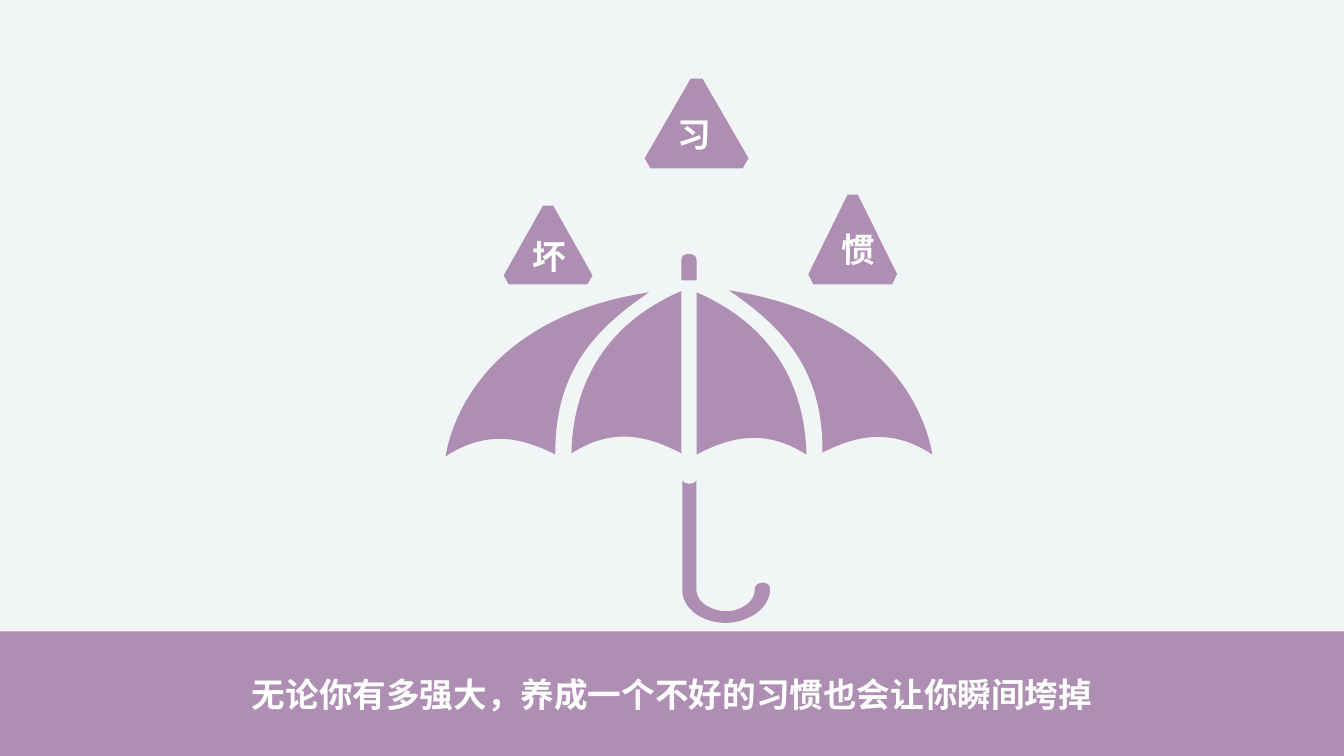
import lxml.etree
import pptx
import pptx.dml.color
import pptx.enum.text
import pptx.oxml.ns
import pptx.util

Pt = pptx.util.Pt
qn = pptx.oxml.ns.qn
COLORS = {"ground": "F1F5F6", "mauve": "AE8EB3", "white": "FFFFFF"}
FONT = "Noto Sans CJK SC"

OUTER = [
    (520.6, 207.4),
    (627.8, 223.9, 659.5, 288, 666, 324.7),
    (638.6, 306.7, 614.2, 309.6, 587.5, 323.3),
    (588.2, 263.5, 558.7, 233.3, 520.6, 207.4),
]
INNER = [
    (497.5, 208.8),
    (560.9, 236.2, 575.3, 287.3, 576, 324.7),
    (547.9, 306.7, 523.4, 311, 497.5, 324.7),
]
TIP = [
    (497.5, 185.8), (497.5, 200.2), (486.7, 200.2), (486.7, 185.8),
    (486.7, 182.9, 488.9, 181.4, 492.1, 181.4),
    (495.4, 181.4, 497.5, 182.9, 497.5, 185.8),
]
HANDLE = [
    (487.4, 343.4),
    (488.2, 344.9, 490.3, 345.6, 492.5, 345.6),
    (494.6, 345.6, 496.8, 344.9, 497.5, 343.4),
    (497.5, 422.6),
    (498.2, 427, 501.1, 431.3, 506.2, 433.4),
    (512.6, 437, 521.3, 437.8, 527.8, 434.9),
    (535, 432, 539.3, 427, 539.3, 420.5),
    (539.3, 418.3, 541.4, 416.2, 545, 416.2),
    (547.9, 416.2, 550.1, 418.3, 550.1, 420.5),
    (550.1, 429.8, 543.6, 437.8, 532.8, 442.1),
    (522.7, 446.4, 509.8, 445.7, 500.4, 440.6),
    (492.5, 436.3, 488.2, 429.8, 487.4, 423.4),
]
DROPS = [
    ("坏", (359.8, 146.9, 63.4, 56.2), (373.3, 164.9, 29.5, 36)),
    ("惯", (577.4, 139, 63.4, 64.1), (594, 159.8, 29.5, 31)),
    ("习", (460.5, 56.2, 74.2, 64.1), (477, 77.8, 50.4, 36)),
]


def tint(name):
    return pptx.dml.color.RGBColor.from_string(COLORS[name])


def paint(fill, name):
    fill.solid()
    fill.fore_color.rgb = tint(name)


def style(frame, text):
    para = frame.paragraphs[0]
    para.text = text
    font = para.font
    font.name, font.size, font.bold = FONT, Pt(24), True
    font.color.rgb = tint("white")
    props = para._p.get_or_add_pPr().get_or_add_defRPr()
    lxml.etree.SubElement(props, qn("a:ea"), typeface=FONT)
    return para


def flip(outline, drop):
    return [
        tuple(v + drop if i % 2 else 984.2 - v for i, v in enumerate(item))
        for item in outline
    ]


def bend(shape, outline):
    lines = iter(list(shape._element.iter(qn("a:lnTo"))))
    for item in outline[1:]:
        first = next(lines)
        if len(item) == 6:
            first.tag = qn("a:cubicBezTo")
            for line in (next(lines), next(lines)):
                first.append(line[0])
                line.getparent().remove(line)


def draw(group, outline):
    points = [
        (Pt(item[i]), Pt(item[i + 1]))
        for item in outline for i in range(0, len(item), 2)
    ]
    pen = group.shapes.build_freeform(*points[0])
    pen.add_line_segments(points[1:], close=False)
    shape = pen.convert_to_shape()
    bend(shape, outline)
    track = next(shape._element.iter(qn("a:moveTo"))).getparent()
    lxml.etree.SubElement(track, qn("a:close"))
    paint(shape.fill, "mauve")
    shape.line.fill.background()
    shape.shadow.inherit = False


def add_drop(slide, text, area, label):
    left, top, width, height = area
    right, base, mid = left + width, top + height, left + width / 2
    cut, rise = 0.057 * width, 0.113 * height
    group = slide.shapes.add_group_shape()
    draw(group, [
        (mid - cut, top), (mid + cut, top),
        (right, base - rise), (right - cut, base),
        (left + cut, base), (left, base - rise),
    ])
    frame = group.shapes.add_textbox(*map(Pt, label)).text_frame
    frame.word_wrap = True
    frame.auto_size = pptx.enum.text.MSO_AUTO_SIZE.SHAPE_TO_FIT_TEXT
    style(frame, text)


def add_band(slide, text):
    band = slide.shapes.title
    band.left, band.top, band.width, band.height = map(Pt, (0, 450.9, 960, 89.1))
    paint(band.fill, "mauve")
    frame = band.text_frame
    frame.auto_size = pptx.enum.text.MSO_AUTO_SIZE.NONE
    frame.vertical_anchor = pptx.enum.text.MSO_ANCHOR.MIDDLE
    style(frame, text).alignment = pptx.enum.text.PP_ALIGN.CENTER


def main():
    deck = pptx.Presentation()
    deck.slide_width, deck.slide_height = Pt(960), Pt(540)
    slide = deck.slides.add_slide(deck.slide_layouts[5])
    paint(slide.background.fill, "ground")
    add_band(slide, "无论你有多强大，养成一个不好的习惯也会让你瞬间垮掉")
    brolly = slide.shapes.add_group_shape()
    for outline in (OUTER, INNER, flip(INNER, -0.9), flip(OUTER, 1.4), TIP, HANDLE):
        draw(brolly, outline)
    for text, area, label in DROPS:
        add_drop(slide, text, area, label)
    deck.save("out.pptx")


if __name__ == "__main__":
    main()
